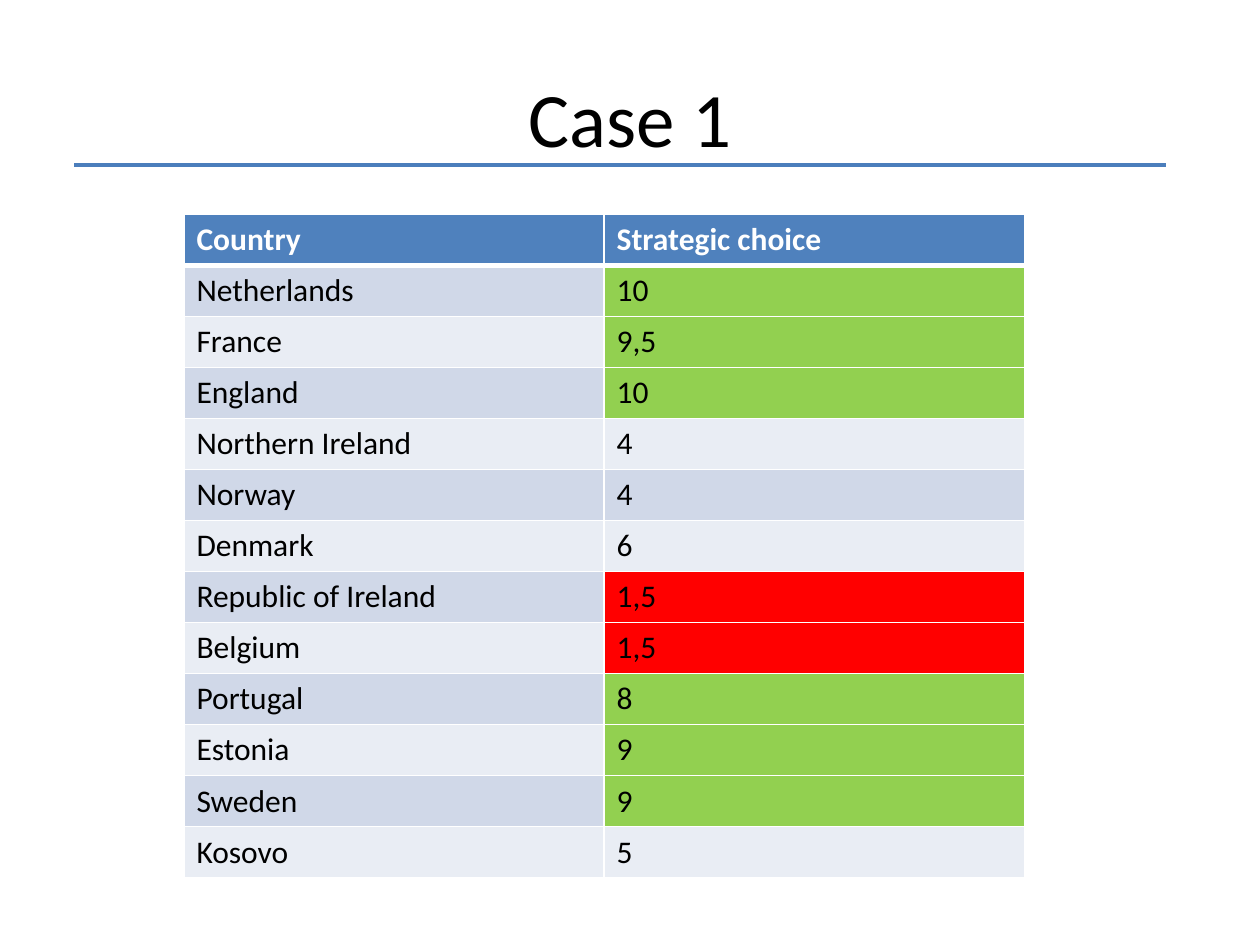
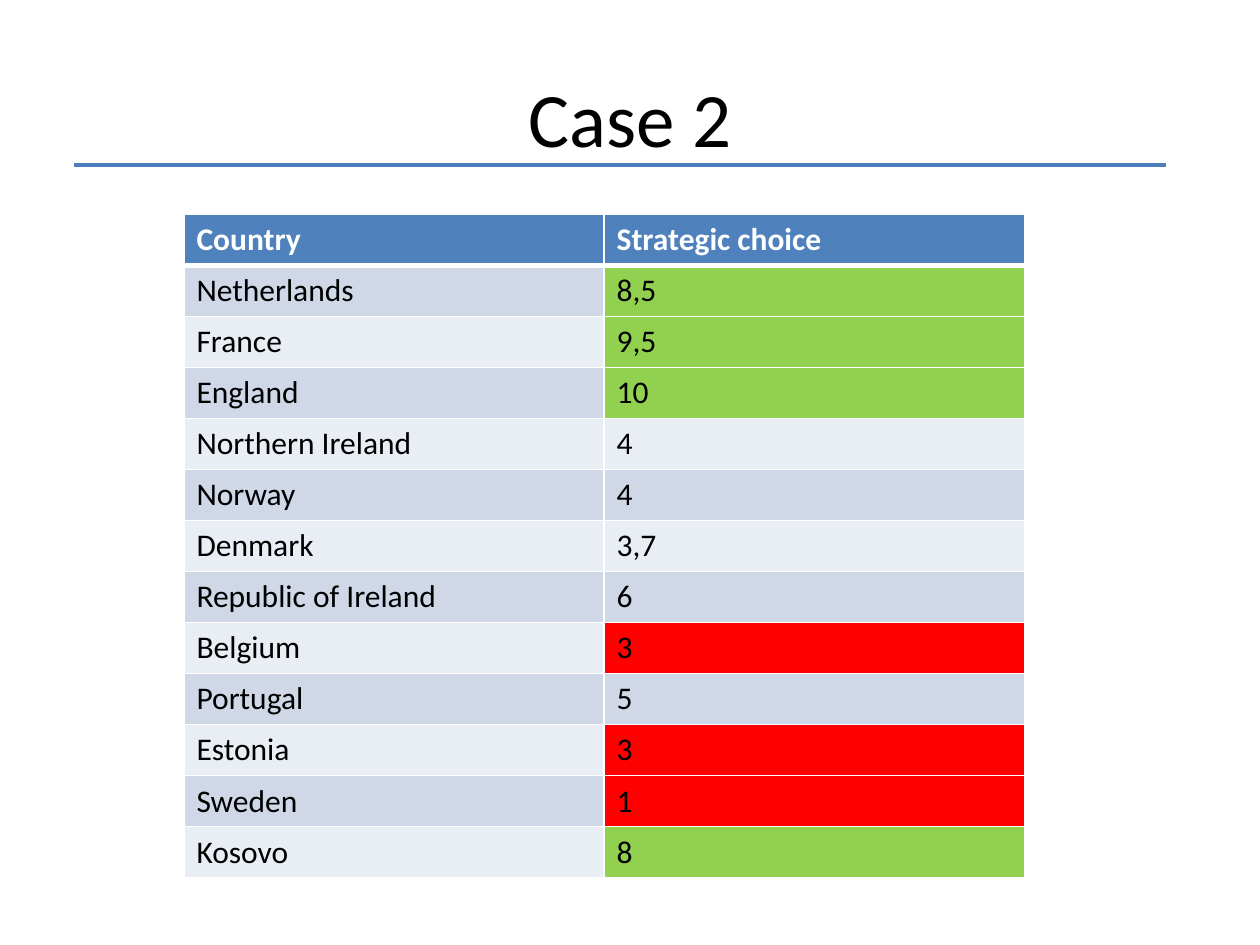
import dataclasses

import lxml.etree
import pptx
import pptx.dml.color
import pptx.enum.shapes
import pptx.enum.text
import pptx.oxml.ns
import pptx.presentation
import pptx.slide
import pptx.table
import pptx.util

Inches = pptx.util.Inches
Pt = pptx.util.Pt
qn = pptx.oxml.ns.qn

FONT = "Calibri"
HEX = {
    "text": "000000",
    "white": "FFFFFF",
    "rule": "4B7EBC",
    "head": "4F81BD",
    "odd": "D0D8E8",
    "even": "E9EDF4",
    "high": "92D050",
    "low": "FF0000",
}
HEADS = ("Country", "Strategic choice")
LANDS = (
    "Netherlands", "France", "England", "Northern Ireland", "Norway", "Denmark",
    "Republic of Ireland", "Belgium", "Portugal", "Estonia", "Sweden", "Kosovo",
)
HIGH, LOW = 8, 3
THIN, THICK = 1, 3


@dataclasses.dataclass(frozen=True)
class Case:
    title: str
    scores: tuple[str, ...]


@dataclasses.dataclass(frozen=True)
class Cell:
    text: str
    fill: str
    color: str = "text"
    bold: bool = False
    top: int = THIN
    bottom: int = THIN


CASES = (
    Case("Case 1", ("10", "9,5", "10", "4", "4", "6", "1,5", "1,5", "8", "9", "9", "5")),
    Case("Case 2", ("8,5", "9,5", "10", "4", "4", "3,7", "6", "3", "5", "3", "1", "8")),
)


def rgb(name: str) -> pptx.dml.color.RGBColor:
    return pptx.dml.color.RGBColor.from_string(HEX[name])


def style(par, size: int, color: str, bold: bool = False) -> None:
    par.font.name = FONT
    par.font.size = Pt(size)
    par.font.bold = bold
    par.font.color.rgb = rgb(color)


def add_title(slide: pptx.slide.Slide, text: str) -> None:
    """Add the centred title and the rule below it."""
    box = slide.shapes.add_textbox(Inches(0.5), Inches(0.3), Inches(9), Inches(1.25))
    frame = box.text_frame
    frame.word_wrap = True
    frame.vertical_anchor = pptx.enum.text.MSO_ANCHOR.MIDDLE
    par = frame.paragraphs[0]
    par.text = text
    par.alignment = pptx.enum.text.PP_ALIGN.CENTER
    style(par, 44, "text")

    rule = slide.shapes.add_connector(
        pptx.enum.shapes.MSO_CONNECTOR.STRAIGHT,
        Inches(0.59), Inches(1.31), Inches(9.25), Inches(1.31),
    )
    rule.line.color.rgb = rgb("rule")
    rule.line.width = Pt(2.5)
    lxml.etree.SubElement(rule.element.spPr, qn("a:effectLst"))


def add_edge(cell: pptx.table._Cell, side: str, width: int) -> None:
    props = cell._tc.get_or_add_tcPr()
    edge = lxml.etree.SubElement(props, qn(f"a:ln{side}"), w=str(Pt(width)))
    fill = lxml.etree.SubElement(edge, qn("a:solidFill"))
    lxml.etree.SubElement(fill, qn("a:srgbClr"), val=HEX["white"])


def draw_cell(cell: pptx.table._Cell, data: Cell) -> None:
    # The schema wants the edges in this order, ahead of the fill.
    for side, width in zip("LRTB", (THIN, THIN, data.top, data.bottom)):
        add_edge(cell, side, width)
    cell.fill.solid()
    cell.fill.fore_color.rgb = rgb(data.fill)
    par = cell.text_frame.paragraphs[0]
    par.text = data.text
    style(par, 18, data.color, data.bold)


def score_fill(score: str, band: str) -> str:
    value = float(score.replace(",", "."))
    if value >= HIGH:
        return "high"
    return "low" if value <= LOW else band


def make_rows(case: Case) -> list[list[Cell]]:
    rows = [[Cell(text, "head", "white", True, bottom=THICK) for text in HEADS]]
    for num, (land, score) in enumerate(zip(LANDS, case.scores), 1):
        band = "odd" if num % 2 else "even"
        top = THICK if num == 1 else THIN
        rows.append([Cell(land, band, top=top),
                     Cell(score, score_fill(score, band), top=top)])
    return rows


def add_table(slide: pptx.slide.Slide, rows: list[list[Cell]]) -> None:
    table = slide.shapes.add_table(
        len(rows), len(HEADS), Inches(1.46), Inches(1.7), Inches(6.67), Inches(5.27)
    ).table
    for num, row in enumerate(rows):
        for col, data in enumerate(row):
            draw_cell(table.cell(num, col), data)


def add_case(deck: pptx.presentation.Presentation, case: Case) -> None:
    slide = deck.slides.add_slide(deck.slide_layouts[6])
    add_title(slide, case.title)
    add_table(slide, make_rows(case))


def main() -> None:
    deck = pptx.Presentation()
    deck.slide_width = Inches(10)
    deck.slide_height = Inches(7.5)
    for case in CASES:
        add_case(deck, case)
    deck.save("out.pptx")


if __name__ == "__main__":
    main()
